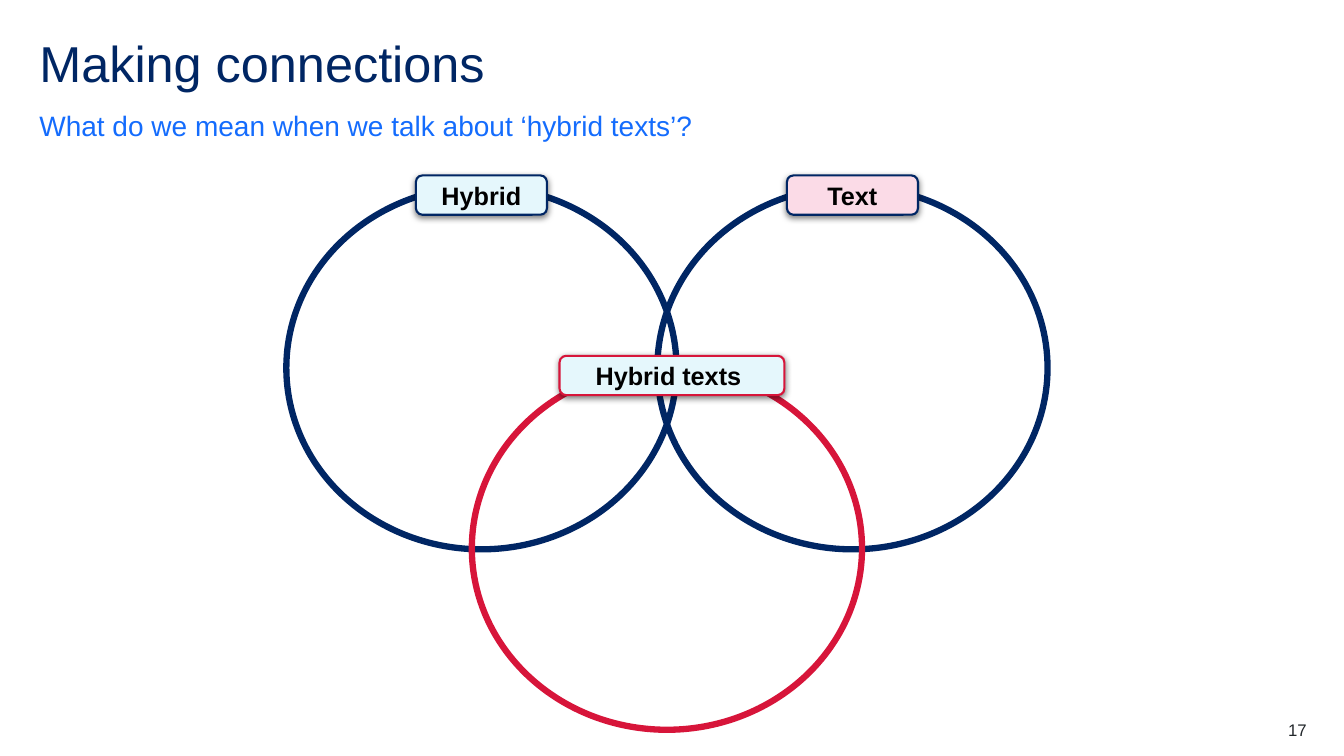
import pptx
import pptx.util
import pptx.dml.color
import pptx.enum.shapes
import pptx.enum.text
import pptx.oxml

Inch, Pt = pptx.util.Inches, pptx.util.Pt
Kind = pptx.enum.shapes.MSO_SHAPE
Align = pptx.enum.text.PP_ALIGN
Anchor = pptx.enum.text.MSO_ANCHOR

NAVY, RED, BLUE, SKY, PINK = "002664", "D7153A", "146CFD", "E5F7FC", "FBDBE7"
SHADE = (
    '<a:effectLst xmlns:a="http://schemas.openxmlformats.org/drawingml/2006/main">'
    '<a:outerShdw blurRad="57150" dist="19050" dir="5400000" algn="ctr" rotWithShape="0">'
    '<a:srgbClr val="000000"><a:alpha val="50000"/></a:srgbClr>'
    '</a:outerShdw></a:effectLst>'
)


def color(code):
    return pptx.dml.color.RGBColor.from_string(code)


def write(shape, text, size, code, pad=(0, 0), bold=False, anchor=Anchor.TOP, **style):
    """Fill a shape with one paragraph; style holds paragraph attributes."""
    frame = shape.text_frame
    frame.text = text
    across, down = map(Inch, pad)
    look = {"word_wrap": True, "auto_size": pptx.enum.text.MSO_AUTO_SIZE.NONE,
            "vertical_anchor": anchor, "margin_left": across, "margin_right": across,
            "margin_top": down, "margin_bottom": down}
    for name, value in look.items():
        setattr(frame, name, value)
    line = frame.paragraphs[0]
    for name, value in style.items():
        setattr(line, name, value)
    font = line.runs[0].font
    for name, value in {"name": "Arial", "size": Pt(size), "bold": bold}.items():
        setattr(font, name, value)
    font.color.rgb = color(code)


deck = pptx.Presentation()
deck.slide_width, deck.slide_height = Inch(13.33), Inch(7.5)
slide = deck.slides.add_slide(deck.slide_layouts[5])
shapes = slide.shapes

# Headings and page number
edge, wide = 0.39, 12.56
title = shapes.title
place = {"left": edge, "top": 0.39, "width": wide, "height": 0.6}
for name, value in place.items():
    setattr(title, name, Inch(value))
write(title, "Making connections", 36, NAVY, line_spacing=0.9, alignment=Align.LEFT)

lead = shapes.add_textbox(Inch(edge), Inch(1.07), Inch(wide), Inch(0.34))
write(lead, "What do we mean when we talk about ‘hybrid texts’?", 20, BLUE,
      anchor=Anchor.BOTTOM, line_spacing=1.5, space_after=Pt(12))

page = shapes.add_textbox(Inch(12.17), Inch(7.14), Inch(0.79), Inch(0.2))
write(page, "17", 12, "22272B", alignment=Align.RIGHT)

# Three rings on a half-step grid, each with a tag over its top edge
left, top, step, drop = 2.84, 1.85, 1.84, 1.79
ring_w, ring_h, tag_h, rise = 3.87, 3.6, 0.39, 0.11
rings = [
    # column, row, text, tag width, tag shift, line, fill
    (0, 0, "Hybrid", 1.3, 0, NAVY, SKY),
    (2, 0, "Text", 1.3, 0, NAVY, PINK),
    (1, 1, "Hybrid texts ", 2.23, 0.05, RED, SKY),
]
for col, row, text, tag_w, shift, edge_code, fill in rings:
    x, y = left + col * step, top + row * drop
    ring = shapes.add_shape(Kind.OVAL, Inch(x), Inch(y), Inch(ring_w), Inch(ring_h))
    ring.shadow.inherit = False
    ring.fill.background()

    tag_x = x + (ring_w - tag_w) / 2 + shift
    tag = shapes.add_shape(Kind.ROUNDED_RECTANGLE, Inch(tag_x), Inch(y - rise),
                           Inch(tag_w), Inch(tag_h))
    tag.fill.solid()
    tag.fill.fore_color.rgb = color(fill)
    write(tag, text, 18, "000000", pad=(0.09, 0.04), bold=True,
          anchor=Anchor.MIDDLE, alignment=Align.CENTER)

    for shape, weight in ((ring, 4.5), (tag, 1.5)):
        shape.line.color.rgb = color(edge_code)
        shape.line.width = Pt(weight)
    tag.element.spPr.append(pptx.oxml.parse_xml(SHADE))

deck.save("out.pptx")
